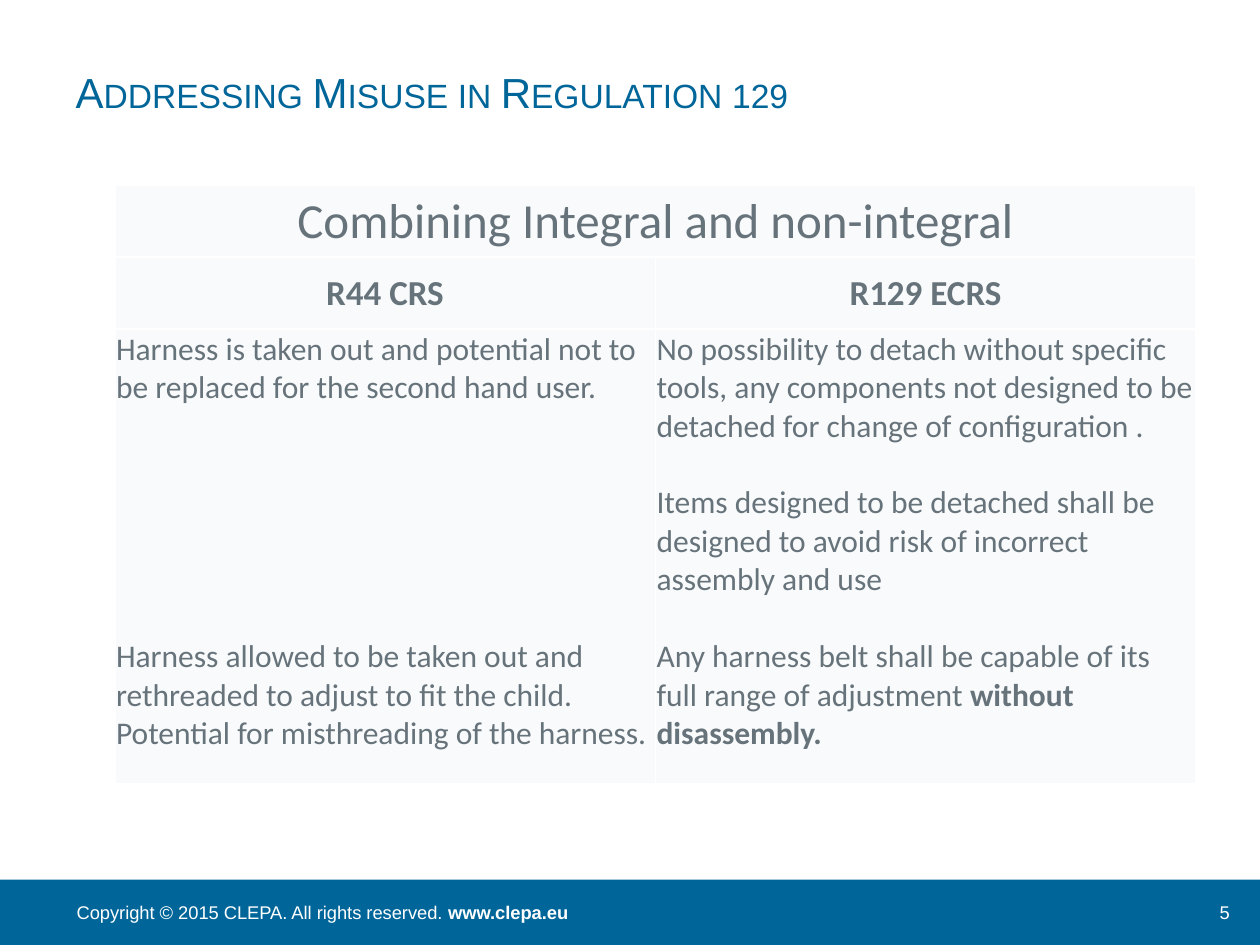
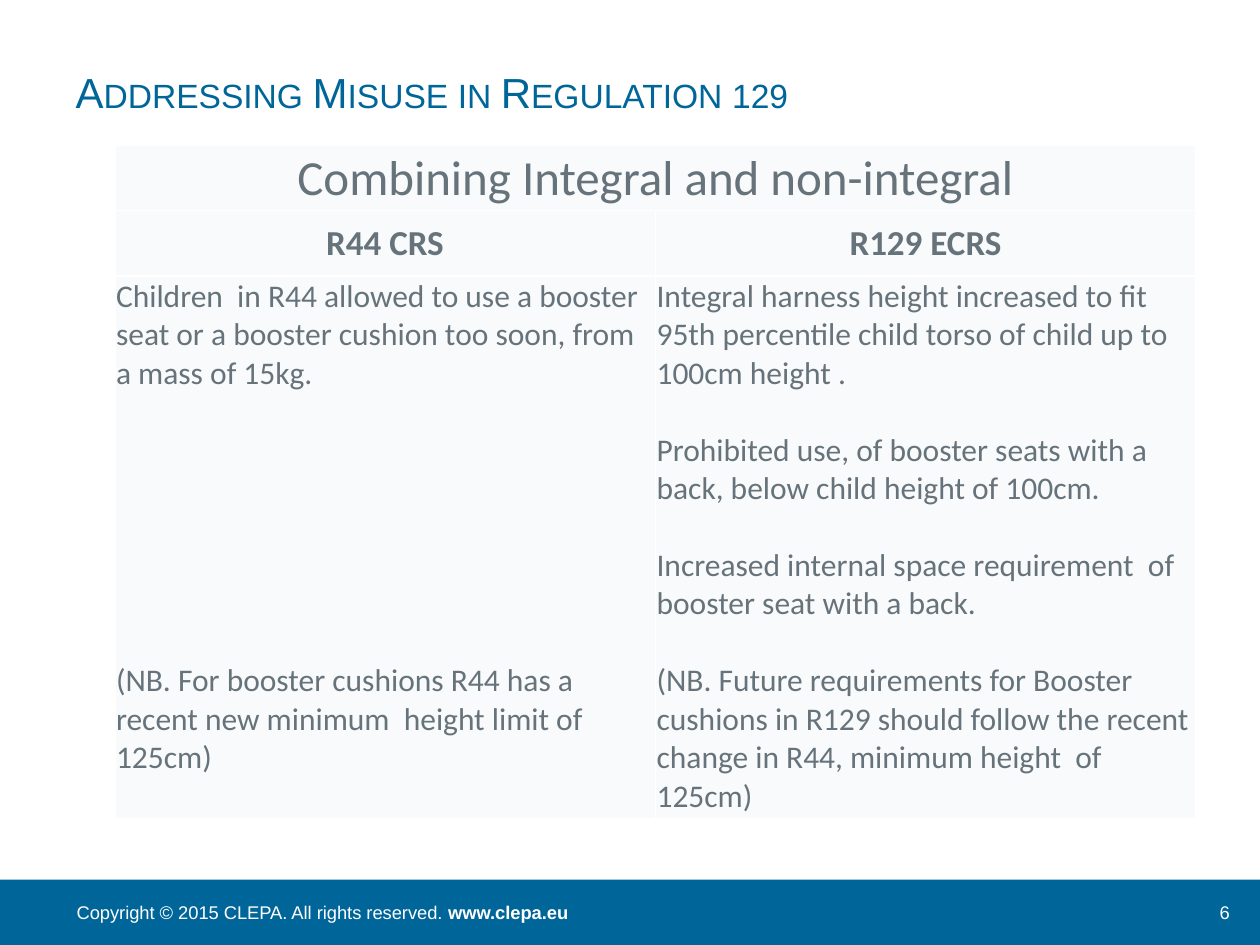
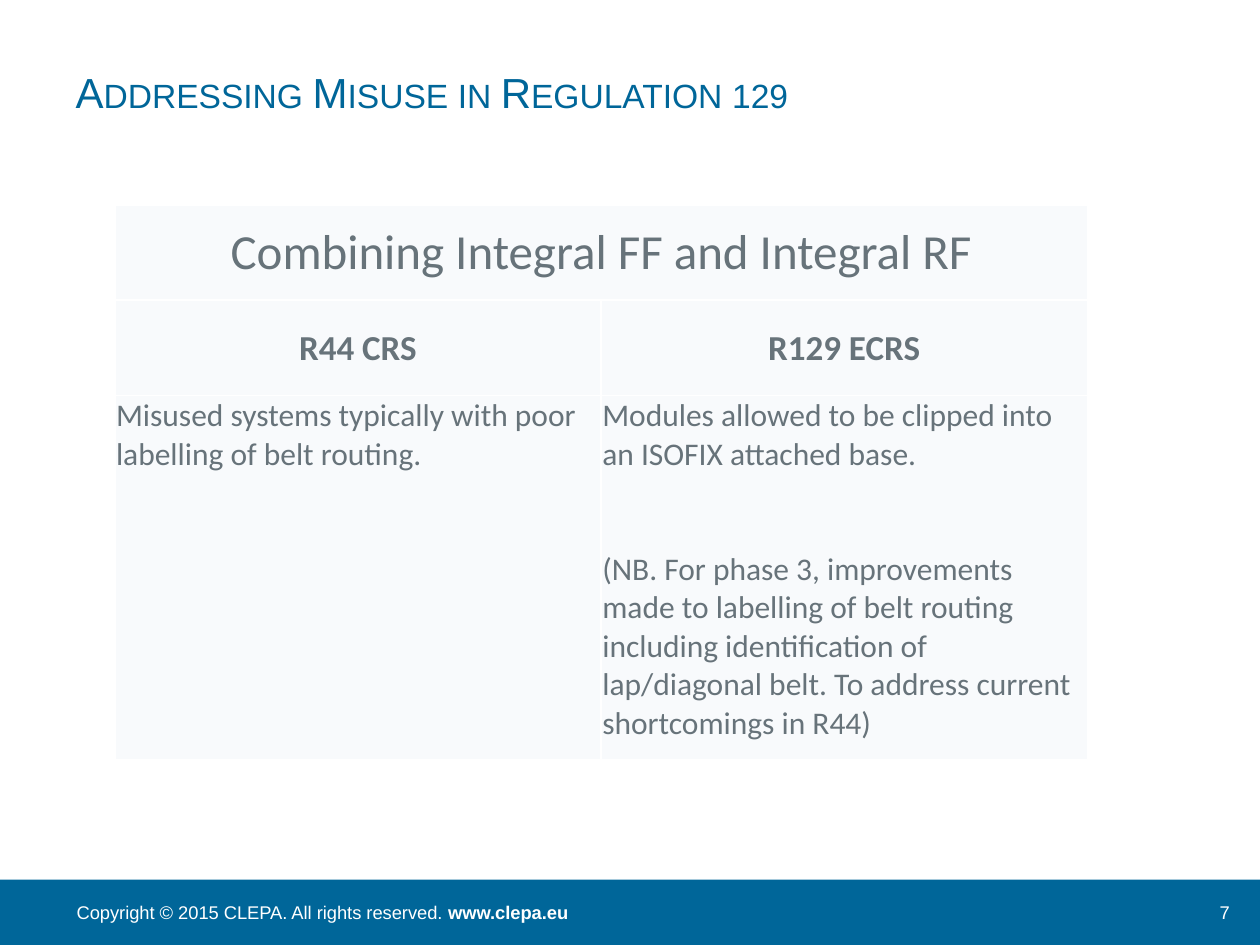
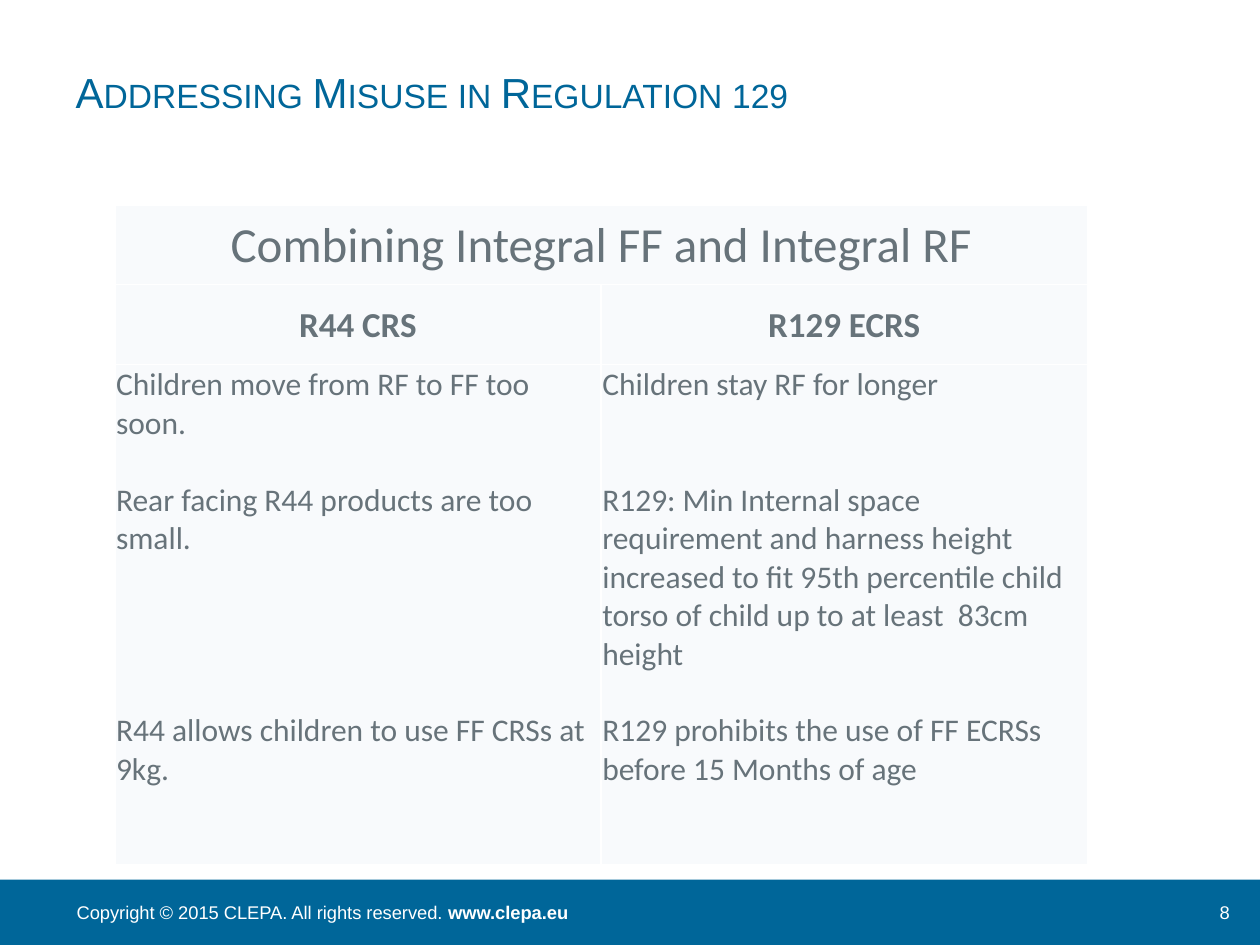
from lxml import etree
from pptx import Presentation
from pptx.dml.color import RGBColor
from pptx.enum.shapes import MSO_SHAPE
from pptx.enum.text import MSO_ANCHOR, MSO_AUTO_SIZE, PP_ALIGN
from pptx.oxml.ns import qn
from pptx.util import Pt

RECTANGLE = MSO_SHAPE.RECTANGLE
MIDDLE, TOP = MSO_ANCHOR.MIDDLE, MSO_ANCHOR.TOP
LEFT, CENTER = PP_ALIGN.LEFT, PP_ALIGN.CENTER
NO_AUTOFIT = MSO_AUTO_SIZE.NONE

COLORS = {"blue": "006699", "white": "FFFFFF", "cell": "F8FAFC", "text": "67737A"}
HEADING_FONT, TABLE_FONT = "Arial", "Calibri"
SLIDE_WIDTH, SLIDE_HEIGHT = 720, 540
TITLE_ONLY = 5
FIRST_PAGE = 5
TITLE = "Addressing Misuse in Regulation 129"
COLUMN_HEADS = ("R44 CRS", "R129 ECRS")
TABLE_LEFT = 65.6
BODY_LINE = 21.97

MIXED = "Combining Integral and non-integral"
FACING = "Combining Integral FF and Integral RF"

# Each body paragraph is (lines of space before, plain text, optional bold text).
TABLES = [
    {"heading": MIXED, "top": 106, "column_width": 308.9, "row_heights": (41, 41, 260),
     "body": (
         [(0, "Harness is taken out and potential not to be replaced for the second hand user."),
          (6, "Harness allowed to be taken out and rethreaded to adjust to fit the child. "
              "Potential for misthreading of the harness.")],
         [(0, "No possibility to detach without specific tools, any components not designed "
              "to be detached for change of configuration ."),
          (1, "Items designed to be detached shall be designed to avoid risk of incorrect "
              "assembly and use"),
          (1, "Any harness belt shall be capable of its full range of adjustment ",
           "without disassembly.")])},
    {"heading": MIXED, "top": 83, "column_width": 308.9, "row_heights": (37.4, 37.4, 310.3),
     "body": (
         [(0, "Children  in R44 allowed to use a booster seat or a booster cushion too soon, "
              "from a mass of 15kg."),
          (7, "(NB. For booster cushions R44 has a recent new minimum  height limit of 125cm)")],
         [(0, "Integral harness height increased to fit 95th percentile child torso of child "
              "up to 100cm height ."),
          (1, "Prohibited use, of booster seats with a back, below child height of 100cm."),
          (1, "Increased internal space requirement  of booster seat with a back."),
          (1, "(NB. Future requirements for Booster cushions in R129 should follow the recent "
              "change in R44, minimum height  of 125cm)")])},
    {"heading": FACING, "top": 117, "column_width": 277.9, "row_heights": (54.5, 54.5, 208),
     "body": (
         [(0, "Misused systems typically with poor labelling of belt routing.")],
         [(0, "Modules allowed to be clipped into an ISOFIX attached base."),
          (2, "(NB. For phase 3, improvements made to labelling of belt routing including "
              "identification of lap/diagonal belt. To address current shortcomings in R44)")])},
    {"heading": FACING, "top": 117, "column_width": 277.9, "row_heights": (45.7, 45.7, 286),
     "body": (
         [(0, "Children move from RF to FF too soon."),
          (1, "Rear facing R44 products are too small."),
          (4, "R44 allows children to use FF CRSs at 9kg.")],
         [(0, "Children stay RF for longer"),
          (2, "R129: Min Internal space requirement and harness height increased to fit 95th "
              "percentile child torso of child up to at least  83cm height"),
          (1, "R129 prohibits the use of FF ECRSs before 15 Months of age")])},
]


def color(name):
    """Return the named palette colour."""
    return RGBColor.from_string(COLORS[name])


def add_run(paragraph, text, font_name, size, color_name, bold=False):
    """Append a formatted run and return it."""
    run = paragraph.add_run()
    run.text = text
    run.font.name = font_name
    run.font.size = Pt(size)
    run.font.bold = bold
    run.font.color.rgb = color(color_name)
    return run


def set_title(slide):
    """Place the small-caps slide title."""
    shape = slide.shapes.title
    shape.left, shape.top, shape.width, shape.height = Pt(36), Pt(21), Pt(607), Pt(62.6)
    frame = shape.text_frame
    frame.auto_size = NO_AUTOFIT
    frame.vertical_anchor = MIDDLE
    paragraph = frame.paragraphs[0]
    paragraph.alignment = LEFT
    run = add_run(paragraph, TITLE, HEADING_FONT, 24, "blue")
    run.font._element.set("cap", "small")


def add_footer_text(slide, left, width, runs, alignment=LEFT):
    """Write (text, bold) runs on the footer band."""
    frame = slide.shapes.add_textbox(Pt(left), Pt(511.2), Pt(width), Pt(20.6)).text_frame
    frame.word_wrap = True
    paragraph = frame.paragraphs[0]
    paragraph.alignment = alignment
    for text, bold in runs:
        add_run(paragraph, text, HEADING_FONT, 10.5, "white", bold)


def add_footer(slide, page):
    """Draw the footer band with copyright line and page number."""
    top = 502.6
    band = slide.shapes.add_shape(
        RECTANGLE, 0, Pt(top), Pt(SLIDE_WIDTH), Pt(SLIDE_HEIGHT - top))
    band.shadow.inherit = False
    band.fill.solid()
    band.fill.fore_color.rgb = color("blue")
    band.line.fill.background()
    add_footer_text(slide, 36.7, 646.6, [
        ("Copyright © 2015 CLEPA. All rights reserved. ", False), ("www.clepa.eu", True)])
    add_footer_text(slide, 680.4, 38.9, [(str(page), False)], CENTER)


def format_cell(cell):
    """Give a cell its thin margins, white borders and pale fill."""
    cell.margin_left = cell.margin_right = cell.margin_top = Pt(0.72)
    cell.margin_bottom = 0
    properties = cell._tc.get_or_add_tcPr()
    for side in ("a:lnL", "a:lnR", "a:lnT", "a:lnB"):
        line = etree.SubElement(properties, qn(side), w=str(Pt(1)))
        fill = etree.SubElement(line, qn("a:solidFill"))
        etree.SubElement(fill, qn("a:srgbClr"), val=COLORS["white"])
    cell.fill.solid()
    cell.fill.fore_color.rgb = color("cell")


def write_heading(cell, text, size, bold=False):
    """Write a centred heading in a cell."""
    cell.vertical_anchor = MIDDLE
    paragraph = cell.text_frame.paragraphs[0]
    paragraph.alignment = CENTER
    add_run(paragraph, text, TABLE_FONT, size, "text", bold)


def write_body(cell, entries):
    """Write the body paragraphs, spaced by whole lines."""
    cell.vertical_anchor = TOP
    frame = cell.text_frame
    for index, (gap_lines, text, *bold_texts) in enumerate(entries):
        paragraph = frame.add_paragraph() if index else frame.paragraphs[0]
        if gap_lines:
            paragraph.space_before = Pt(gap_lines * BODY_LINE)
        add_run(paragraph, text, TABLE_FONT, 18, "text")
        for bold_text in bold_texts:
            add_run(paragraph, bold_text, TABLE_FONT, 18, "text", True)


def add_comparison(slide, heading, top, column_width, row_heights, body):
    """Add the table comparing both regulations."""
    table = slide.shapes.add_table(
        len(row_heights), len(COLUMN_HEADS), Pt(TABLE_LEFT), Pt(top),
        Pt(column_width * len(COLUMN_HEADS)), Pt(sum(row_heights))).table
    table.first_row = table.horz_banding = False
    for column in table.columns:
        column.width = Pt(column_width)
    for row, height in zip(table.rows, row_heights):
        row.height = Pt(height)
        for cell in row.cells:
            format_cell(cell)
    table.cell(0, 0).merge(table.cell(0, 1))
    write_heading(table.cell(0, 0), heading, 28)
    for index, (column_head, entries) in enumerate(zip(COLUMN_HEADS, body)):
        write_heading(table.cell(1, index), column_head, 20, True)
        write_body(table.cell(2, index), entries)


def main():
    """Build and save the presentation."""
    presentation = Presentation()
    presentation.slide_width, presentation.slide_height = Pt(SLIDE_WIDTH), Pt(SLIDE_HEIGHT)
    for page, comparison in enumerate(TABLES, FIRST_PAGE):
        slide = presentation.slides.add_slide(presentation.slide_layouts[TITLE_ONLY])
        add_footer(slide, page)
        set_title(slide)
        add_comparison(slide, **comparison)
    presentation.save("out.pptx")


if __name__ == "__main__":
    main()
